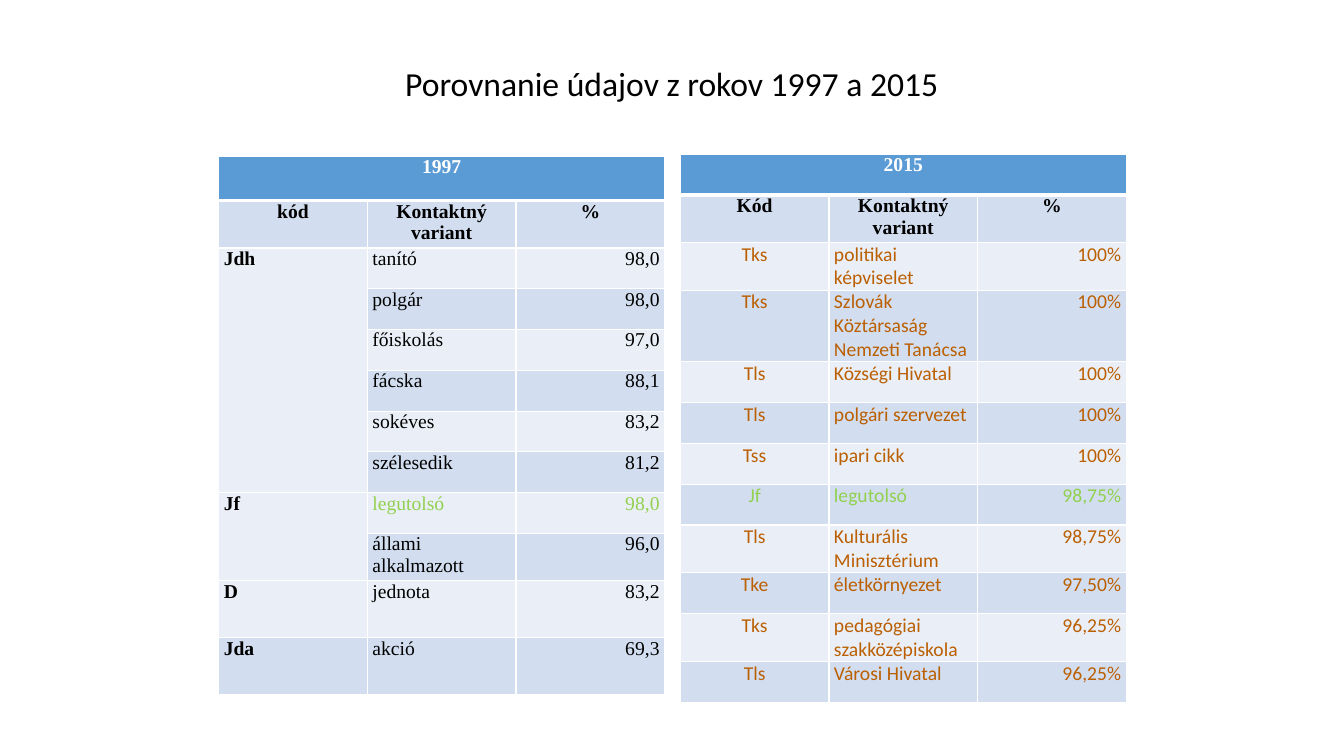
import dataclasses
import typing

import lxml.etree
import pptx
import pptx.dml.color
import pptx.enum.text
import pptx.oxml.ns
import pptx.util

PX = 4572
ALIGN = pptx.enum.text.PP_ALIGN


@dataclasses.dataclass(frozen=True)
class Theme:
    header: str = "5B9BD5"
    dark_band: str = "D2DEEF"
    light_band: str = "EAEFF7"
    border: str = "FFFFFF"
    header_text: str = "FFFFFF"
    text: str = "000000"
    new_text: str = "BB5F03"
    shared_text: str = "92D050"
    serif: str = "Times New Roman"
    sans: str = "Calibri"
    title_size: int = 24
    table_size: int = 14
    thin_line: int = 1
    thick_line: int = 3


class Variant(typing.NamedTuple):
    code: str
    word: str
    share: str
    height: int = 81


class Style(typing.NamedTuple):
    font: str
    color: str
    bold: bool
    alignment: ALIGN


@dataclasses.dataclass(frozen=True)
class YearTable:
    year: str
    left: int
    top: int
    header_height: int
    code_label: str
    font: str
    color: str
    code_bold: bool
    code_alignment: ALIGN
    variants: list[Variant]


THEME = Theme()
COLUMN_WIDTH = 295
LABEL_HEIGHT = 94
CELL_MARGIN = 10
SHARED_WORD = "legutolsó"

TABLES = [
    YearTable(
        "1997", 434, 310, 88, "kód", THEME.serif, THEME.text, True, ALIGN.LEFT,
        [
            Variant("Jdh", "tanító", "98,0"),
            Variant("", "polgár", "98,0"),
            Variant("", "főiskolás", "97,0"),
            Variant("", "fácska", "88,1"),
            Variant("", "sokéves", "83,2"),
            Variant("", "szélesedik", "81,2"),
            Variant("Jf", SHARED_WORD, "98,0"),
            Variant("", "állami alkalmazott", "96,0", 94),
            Variant("D", "jednota", "83,2", 113),
            Variant("Jda", "akció", "69,3", 113),
        ],
    ),
    YearTable(
        "2015", 1350, 306, 81, "Kód", THEME.sans, THEME.new_text, False, ALIGN.CENTER,
        [
            Variant("Tks", "politikai képviselet", "100%", 95),
            Variant("Tks", "Szlovák Köztársaság Nemzeti Tanácsa", "100%", 142),
            Variant("Tls", "Községi Hivatal", "100%"),
            Variant("Tls", "polgári szervezet", "100%"),
            Variant("Tss", "ipari cikk", "100%"),
            Variant("Jf", SHARED_WORD, "98,75%"),
            Variant("Tls", "Kulturális Minisztérium", "98,75%", 95),
            Variant("Tke", "életkörnyezet", "97,50%"),
            Variant("Tks", "pedagógiai szakközépiskola", "96,25%", 95),
            Variant("Tls", "Városi Hivatal", "96,25%"),
        ],
    ),
]


def px(length: int) -> pptx.util.Emu:
    return pptx.util.Emu(length * PX)


def rgb(color: str) -> pptx.dml.color.RGBColor:
    return pptx.dml.color.RGBColor.from_string(color)


def format_runs(paragraph, style: Style, size: int) -> None:
    paragraph.alignment = style.alignment
    for run in paragraph.runs:
        run.font.name = style.font
        run.font.size = pptx.util.Pt(size)
        run.font.bold = style.bold
        run.font.color.rgb = rgb(style.color)


def add_borders(cell, bottom_width: int) -> None:
    properties = cell._tc.get_or_add_tcPr()
    for side in "LRTB":
        width = bottom_width if side == "B" else THEME.thin_line
        line = lxml.etree.SubElement(
            properties, pptx.oxml.ns.qn(f"a:ln{side}"), w=str(pptx.util.Pt(width))
        )
        fill = lxml.etree.SubElement(line, pptx.oxml.ns.qn("a:solidFill"))
        lxml.etree.SubElement(fill, pptx.oxml.ns.qn("a:srgbClr"), val=THEME.border)


def prepare_cell(cell, row_index: int) -> None:
    add_borders(cell, THEME.thin_line if row_index else THEME.thick_line)
    band = THEME.dark_band if row_index % 2 else THEME.light_band
    cell.fill.solid()
    cell.fill.fore_color.rgb = rgb(band if row_index else THEME.header)
    cell.margin_left = cell.margin_right = px(CELL_MARGIN)
    cell.margin_top = cell.margin_bottom = 0


def write_cell(cell, text: str, style: Style) -> None:
    cell.text_frame.text = text
    format_runs(cell.text_frame.paragraphs[0], style, THEME.table_size)


def merge_codes(table, variants: list[Variant]) -> None:
    starts = [index for index, variant in enumerate(variants) if variant.code]
    for start, end in zip(starts, starts[1:] + [len(variants)]):
        if end - start > 1:
            table.cell(start + 2, 0).merge(table.cell(end + 1, 0))


def write_variant(table, row_index: int, variant: Variant, year_table: YearTable) -> None:
    color = THEME.shared_text if variant.word == SHARED_WORD else year_table.color
    code_color = year_table.color if year_table.code_bold else color
    font = year_table.font
    styles = [
        Style(font, code_color, year_table.code_bold, year_table.code_alignment),
        Style(font, color, False, ALIGN.LEFT),
        Style(font, color, False, ALIGN.RIGHT),
    ]
    texts = [variant.code, variant.word, variant.share]
    for column_index, (text, style) in enumerate(zip(texts, styles)):
        if text:
            write_cell(table.cell(row_index, column_index), text, style)


def add_year_table(slide, year_table: YearTable) -> None:
    heights = [year_table.header_height, LABEL_HEIGHT]
    heights += [variant.height for variant in year_table.variants]
    table = slide.shapes.add_table(
        len(heights), 3, px(year_table.left), px(year_table.top),
        px(3 * COLUMN_WIDTH), px(sum(heights)),
    ).table
    for column in table.columns:
        column.width = px(COLUMN_WIDTH)
    for row_index, (row, height) in enumerate(zip(table.rows, heights)):
        row.height = px(height)
        for cell in row.cells:
            prepare_cell(cell, row_index)

    table.cell(0, 0).merge(table.cell(0, 2))
    merge_codes(table, year_table.variants)
    header_style = Style(THEME.serif, THEME.header_text, True, ALIGN.CENTER)
    write_cell(table.cell(0, 0), year_table.year, header_style)
    label_style = header_style._replace(color=THEME.text)
    for column_index, label in enumerate([year_table.code_label, "Kontaktný variant", "%"]):
        write_cell(table.cell(1, column_index), label, label_style)
    for row_index, variant in enumerate(year_table.variants, start=2):
        write_variant(table, row_index, variant, year_table)


def add_title(slide, text: str) -> None:
    title = slide.shapes.title
    title.left, title.top, title.width, title.height = px(183), px(80), px(2300), px(180)
    title.text_frame.text = text
    title.text_frame.vertical_anchor = pptx.enum.text.MSO_ANCHOR.MIDDLE
    paragraph = title.text_frame.paragraphs[0]
    paragraph.line_spacing = 0.9
    format_runs(paragraph, Style(THEME.sans, THEME.text, False, ALIGN.CENTER), THEME.title_size)


def main() -> None:
    presentation = pptx.Presentation()
    presentation.slide_width = px(2667)
    presentation.slide_height = px(1500)
    slide = presentation.slides.add_slide(presentation.slide_layouts.get_by_name("Title Only"))
    add_title(slide, "Porovnanie údajov z rokov 1997 a 2015")
    for year_table in TABLES:
        add_year_table(slide, year_table)
    presentation.save("out.pptx")


if __name__ == "__main__":
    main()
